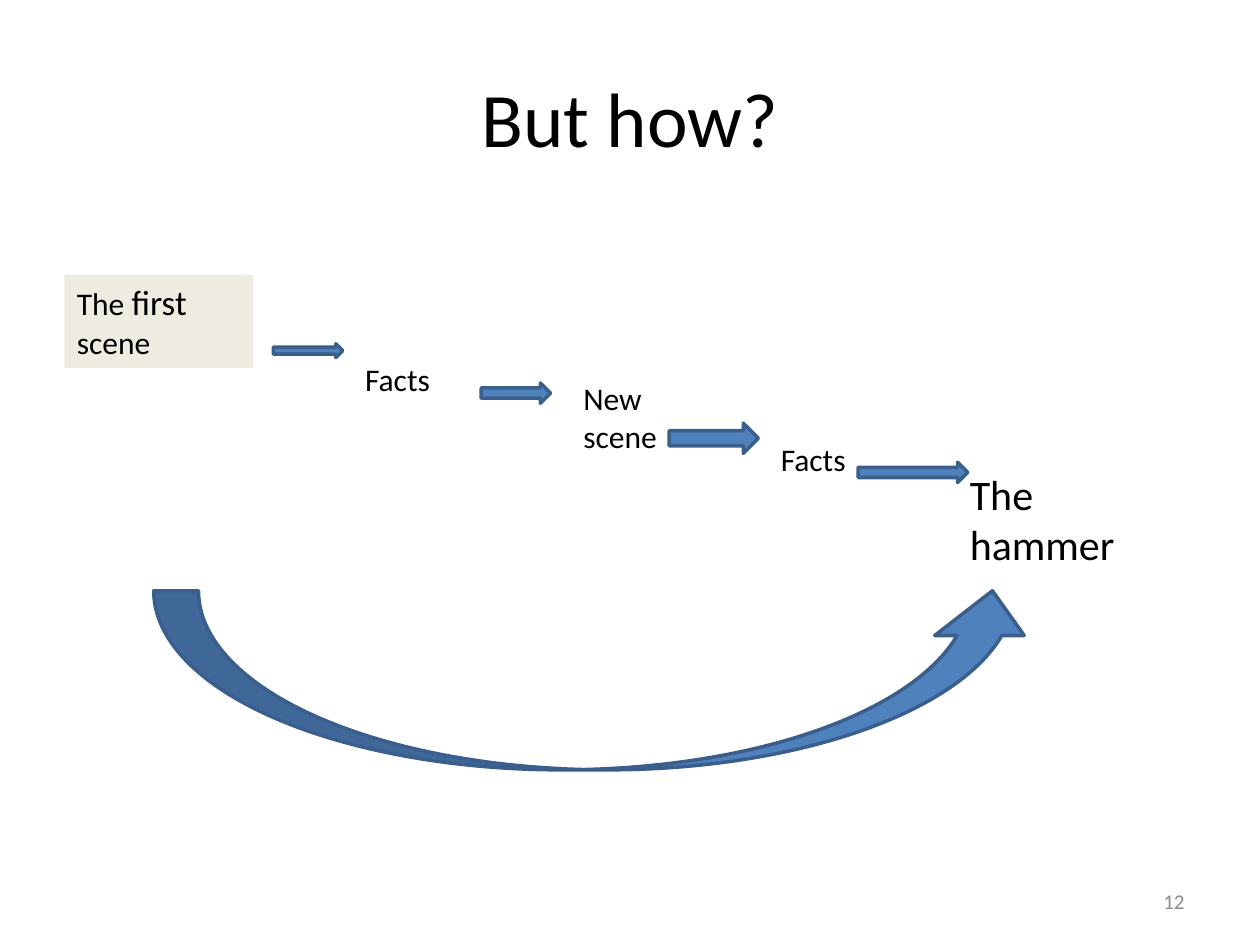
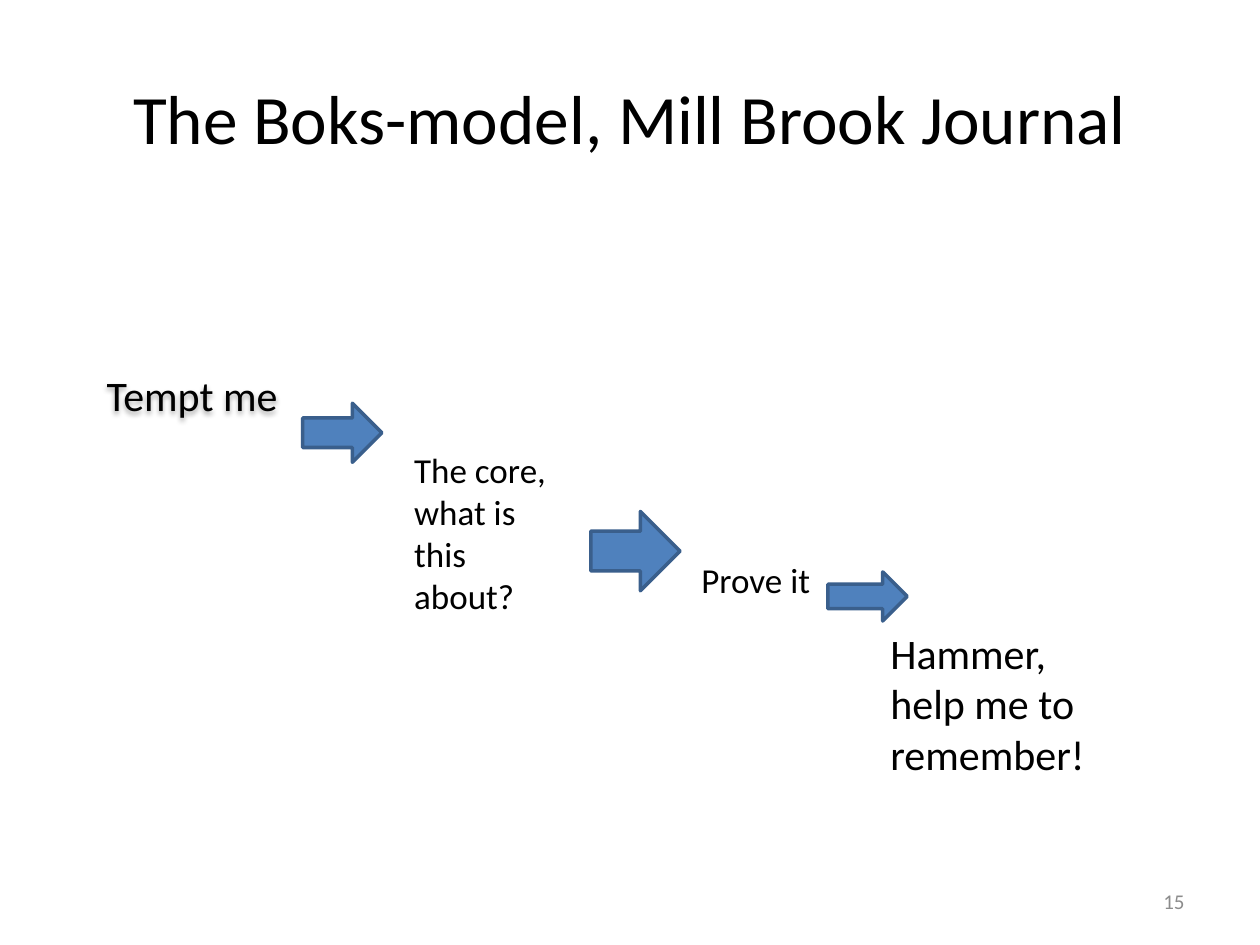
from lxml import etree
from pptx import Presentation
from pptx.dml.color import RGBColor
from pptx.enum import shapes, text
from pptx.oxml.ns import qn
from pptx.util import Cm, Pt

BLACK = RGBColor(0x00, 0x00, 0x00)
GREY = RGBColor(0x8C, 0x8C, 0x8C)
CREAM = RGBColor(0xEE, 0xEC, 0xE1)
BLUE = RGBColor(0x4F, 0x81, 0xBD)
NAVY = RGBColor(0x3A, 0x5F, 0x8C)
FONT = "Calibri"
RIGHT = shapes.MSO_SHAPE.RIGHT_ARROW
CURVE = shapes.MSO_SHAPE.CURVED_UP_ARROW
ALIGN = text.PP_ALIGN
ANCHOR = text.MSO_ANCHOR


def write(slide, words, place, size=18, color=BLACK, align=ALIGN.LEFT,
          anchor=ANCHOR.TOP, fill=None):
    """Add a text box; words is a string or a list of (string, size) runs."""
    box = slide.shapes.add_textbox(*map(Cm, place))
    if fill is not None:
        box.fill.solid()
        box.fill.fore_color.rgb = fill
    frame = box.text_frame
    frame.word_wrap = True
    frame.vertical_anchor = anchor
    para = frame.paragraphs[0]
    para.alignment = align
    for part, pts in [(words, size)] if isinstance(words, str) else words:
        run = para.add_run()
        run.text = part
        run.font.name = FONT
        run.font.size = Pt(pts)
        run.font.color.rgb = color
    return box


def point(slide, kind, place):
    """Add a blue block arrow."""
    arrow = slide.shapes.add_shape(kind, *map(Cm, place))
    arrow.shadow.inherit = False
    arrow.fill.solid()
    arrow.fill.fore_color.rgb = BLUE
    arrow.line.color.rgb = NAVY
    arrow.line.width = Pt(2)


deck = Presentation()
deck.slide_width, deck.slide_height = Cm(25.4), Cm(19.05)

# Title and slide number
pages = []
for title, size, number in [("But how?", 44, "12"),
                            ("The Boks-model, Mill Brook Journal", 39.6, "15")]:
    page = deck.slides.add_slide(deck.slide_layouts[6])
    write(page, title, (1.27, 0.76, 22.86, 3.18), size=size,
          align=ALIGN.CENTER, anchor=ANCHOR.MIDDLE)
    write(page, number, (18.21, 17.65, 5.92, 1.02), size=12, color=GREY,
          align=ALIGN.RIGHT, anchor=ANCHOR.MIDDLE)
    pages.append(page)
how, model = pages

# From the first scene to the hammer
write(how, [("The ", 18), ("first", 20), (" scene", 18)],
      (1.3, 5.54, 3.81, 1.88), fill=CREAM)
for words, place, size in [
    ("Facts", (7.11, 7.14, 3.61, 1.02), 18),
    ("New scene", (11.51, 7.52, 3, 1.8), 18),
    ("Facts", (15.49, 8.74, 2.21, 1.02), 18),
    ("The hammer", (19.3, 9.32, 3.99, 2.31), 24),
]:
    write(how, words, place, size=size)
for place in [(5.51, 6.93, 1.4, 0.28), (9.7, 7.72, 1.4, 0.41),
              (13.49, 8.53, 1.8, 0.61), (17.3, 9.32, 2.21, 0.41)]:
    point(how, RIGHT, place)
point(how, CURVE, (3.1, 11.91, 17.81, 3.61))

# Four steps of the model
tempt = write(model, "Tempt me", (1.9, 7.32, 4.8, 1.27), size=24)
glow = etree.SubElement(tempt.element.spPr, qn("a:effectLst"))
shade = etree.SubElement(glow, qn("a:outerShdw"), blurRad="40000",
                         dist="23000", dir="5400000", rotWithShape="0")
tone = etree.SubElement(shade, qn("a:srgbClr"), val="000000")
etree.SubElement(tone, qn("a:alpha"), val="35000")

for words, place, size in [
    ("The core, what is this about?", (8.1, 8.92, 3.61, 3.68), 20),
    ("Prove it", (13.89, 11.13, 3.61, 1.12), 20),
    ("Hammer, help me to remember!", (17.7, 12.52, 5.21, 3.33), 24),
]:
    write(model, words, place, size=size)
for place in [(6.1, 8.13, 1.6, 1.19), (11.91, 10.31, 1.8, 1.6),
              (16.69, 11.53, 1.6, 0.99)]:
    point(model, RIGHT, place)

deck.save("out.pptx")
